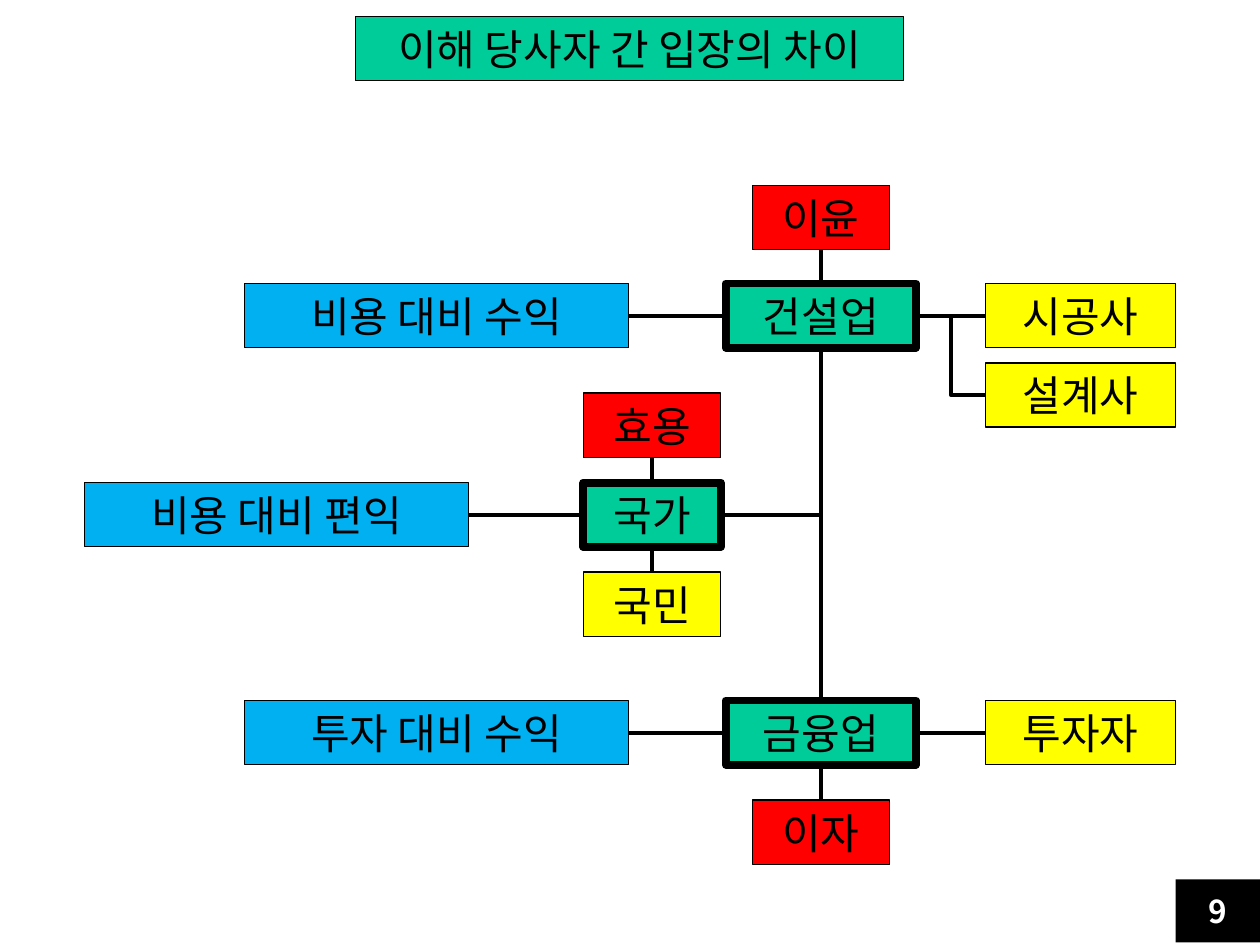
from lxml import etree
from pptx import Presentation
from pptx.dml.color import RGBColor
from pptx.enum import shapes, text
from pptx.oxml import ns
from pptx.util import Inches, Pt

FONT = "Noto Sans CJK KR"
BLACK = RGBColor(0x00, 0x00, 0x00)
WHITE = RGBColor(0xFF, 0xFF, 0xFF)
GREEN = RGBColor(0x00, 0xCC, 0x99)
YELLOW = RGBColor(0xFF, 0xFF, 0x00)
BLUE = RGBColor(0x00, 0xB0, 0xF0)
RED = RGBColor(0xFF, 0x00, 0x00)

TOP, LEFT, BOTTOM, RIGHT = range(4)
BOX_HEIGHT = 0.51
THIN, THICK, LINK = 0.75, 4.5, 2.25
SHORT, MEDIUM, LONG = 1.09, 1.51, 3.05

TITLE = ("이해 당사자 간 입장의 차이", 2.82, 0.13, 4.35)
PAGE_NUMBER = "9"

# (fill, border width, box width, [(text, left, top)])
BOX_GROUPS = [
    (GREEN, THICK, MEDIUM, [("건설업", 5.76, 2.25), ("금융업", 5.76, 5.56)]),
    (GREEN, THICK, SHORT, [("국가", 4.63, 3.83)]),
    (YELLOW, THIN, MEDIUM, [("시공사", 7.82, 2.25), ("설계사", 7.82, 2.88),
                            ("투자자", 7.82, 5.56)]),
    (YELLOW, THIN, SHORT, [("국민", 4.63, 4.54)]),
    (BLUE, THIN, LONG, [("비용 대비 편익", 0.67, 3.83), ("비용 대비 수익", 1.94, 2.25),
                        ("투자 대비 수익", 1.94, 5.56)]),
    (RED, THIN, SHORT, [("이윤", 5.97, 1.47), ("이자", 5.97, 6.35), ("효용", 4.63, 3.12)]),
]

# (from box, side, to box, side)
LINKS = [
    ("건설업", RIGHT, "시공사", LEFT),
    ("건설업", TOP, "이윤", BOTTOM),
    ("이자", TOP, "금융업", BOTTOM),
    ("건설업", BOTTOM, "금융업", TOP),
    ("비용 대비 수익", RIGHT, "건설업", LEFT),
    ("투자 대비 수익", RIGHT, "금융업", LEFT),
    ("금융업", RIGHT, "투자자", LEFT),
    ("국민", TOP, "국가", BOTTOM),
    ("비용 대비 편익", RIGHT, "국가", LEFT),
    ("국가", TOP, "효용", BOTTOM),
]


def add_box(slide, label, left, top, width, fill, border,
            height=BOX_HEIGHT, size=24, color=BLACK, bold=False):
    shape = slide.shapes.add_shape(
        shapes.MSO_SHAPE.RECTANGLE,
        Inches(left), Inches(top), Inches(width), Inches(height))
    shape.shadow.inherit = False
    shape.fill.solid()
    shape.fill.fore_color.rgb = fill
    if border:
        shape.line.color.rgb = BLACK
        shape.line.width = Pt(border)
    else:
        shape.line.fill.background()

    frame = shape.text_frame
    frame.text = label
    frame.word_wrap = False
    frame.vertical_anchor = text.MSO_ANCHOR.MIDDLE
    paragraph = frame.paragraphs[0]
    paragraph.alignment = text.PP_ALIGN.CENTER
    font = paragraph.runs[0].font
    font.name, font.size, font.bold = FONT, Pt(size), bold
    font.color.rgb = color
    east_asian = etree.SubElement(paragraph.runs[0]._r.get_or_add_rPr(), ns.qn("a:ea"))
    east_asian.set("typeface", FONT)
    return shape


def add_link(slide, kind=shapes.MSO_CONNECTOR.STRAIGHT, end=(0, 0)):
    """Add a black connector ending at a point; its boxes are joined by the caller."""
    connector = slide.shapes.add_connector(kind, *end, *end)
    connector.line.color.rgb = BLACK
    connector.line.width = Pt(LINK)
    etree.SubElement(connector._element.spPr, ns.qn("a:effectLst"))
    return connector


def main():
    presentation = Presentation()
    presentation.slide_width, presentation.slide_height = Inches(10), Inches(7.5)
    slide = presentation.slides.add_slide(presentation.slide_layouts[6])

    add_box(slide, *TITLE, GREEN, THIN)
    boxes = {}
    for fill, border, width, items in BOX_GROUPS:
        for label, left, top in items:
            boxes[label] = add_box(slide, label, left, top, width, fill, border)

    for start, start_side, finish, finish_side in LINKS:
        link = add_link(slide)
        link.begin_connect(boxes[start], start_side)
        link.end_connect(boxes[finish], finish_side)

    branch = add_link(slide, shapes.MSO_CONNECTOR.ELBOW)
    branch.begin_connect(boxes["건설업"], RIGHT)
    branch.end_connect(boxes["설계사"], LEFT)

    industry, nation = boxes["건설업"], boxes["국가"]
    trunk_point = (industry.left + industry.width // 2, nation.top + nation.height // 2)
    add_link(slide, end=trunk_point).begin_connect(nation, RIGHT)

    add_box(slide, PAGE_NUMBER, 9.33, 6.98, 0.67, BLACK, None,
            height=0.5, size=18, color=WHITE, bold=True)
    presentation.save("out.pptx")


if __name__ == "__main__":
    main()
